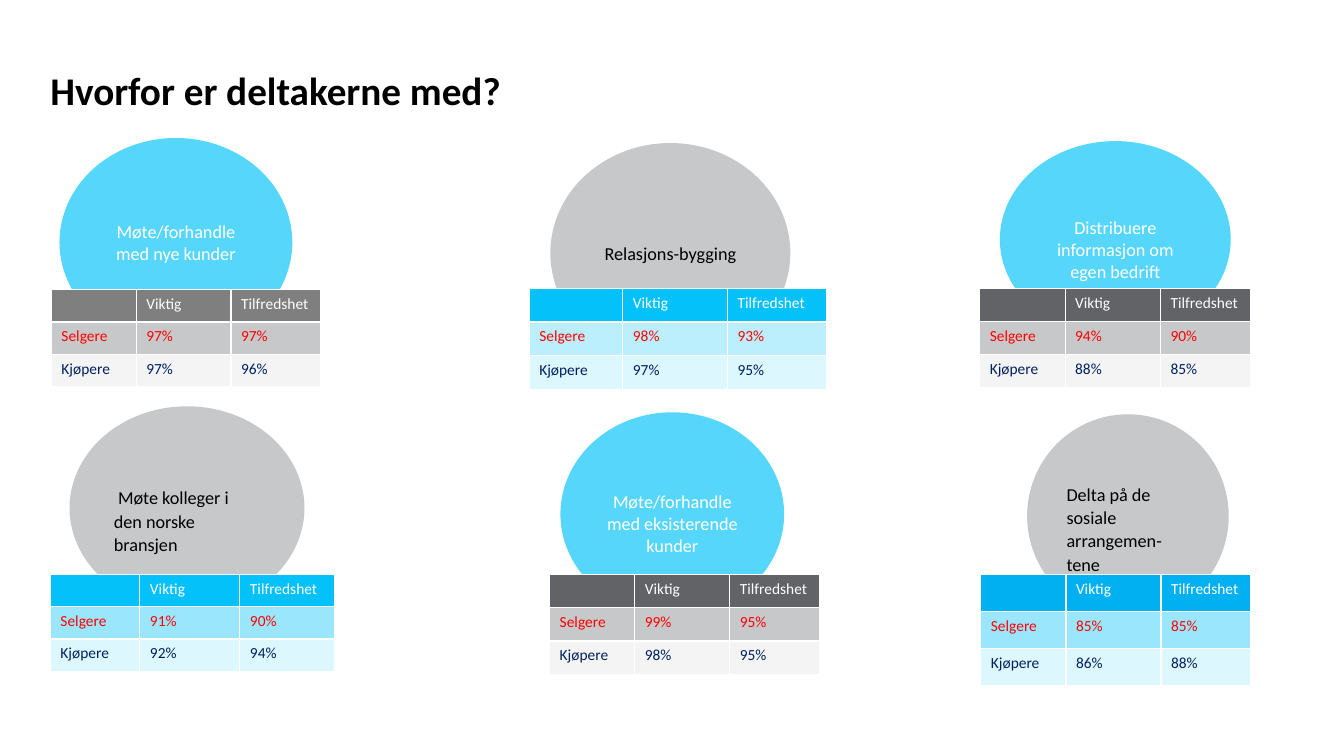
from pptx import Presentation
from pptx.dml.color import RGBColor
from pptx.enum.shapes import MSO_SHAPE
from pptx.enum.text import MSO_ANCHOR, MSO_AUTO_SIZE, PP_ALIGN
from pptx.oxml import parse_xml
from pptx.oxml.ns import nsdecls
from pptx.util import Pt

HEX = {
    "white": "FFFFFF", "black": "000000", "red": "FF0000", "navy": "002060",
    "sky": "57D6FC", "silver": "C7C8CA", "pale": "F4F4F4",
    "gray": "7E7F7E", "slate": "616367", "cyan": "04C1FA", "blue": "00B0F0",
    "ice": "BCEFFE", "aqua": "9AE6FD", "mist": "DDF7FE",
}


def color(name):
    return RGBColor.from_string(HEX[name])


def style(para, size, tint, bold=False):
    font = para.font
    font.name, font.size, font.bold = "Calibri", Pt(size), bold
    font.color.rgb = color(tint)


deck = Presentation()
deck.slide_width, deck.slide_height = Pt(960), Pt(540)
slide = deck.slides.add_slide(deck.slide_layouts[5])

# Title
title = slide.shapes.title
title.left, title.top, title.width, title.height = Pt(36), Pt(51), Pt(891), Pt(36)
frame = title.text_frame
frame.text = "Hvorfor er deltakerne med?"
frame.auto_size = MSO_AUTO_SIZE.NONE
frame.vertical_anchor = MSO_ANCHOR.TOP
frame.margin_left = frame.margin_top = frame.margin_right = frame.margin_bottom = 0
para = frame.paragraphs[0]
para.alignment = PP_ALIGN.LEFT
para.line_spacing = 0.9
style(para, 28, "black", True)

# Reasons: text, fill, box, top inset, centred, first-line indent
reasons = [
    ("Møte/forhandle med nye kunder", "sky", (42.5, 98.6, 166.3, 149), 3.6, True, 0),
    ("Relasjons-bygging", "silver", (393.1, 102.2, 171.4, 157), 3.6, True, 0),
    ("Distribuere informasjon om egen bedrift", "sky",
     (714.2, 100.8, 164.9, 140.4), 18, True, 0),
    ("Møte kolleger i den norske bransjen", "silver",
     (49.7, 290.2, 167.8, 145.4), 21, False, 3),
    ("Møte/forhandle med eksisterende kunder", "sky",
     (400.3, 294.5, 159.8, 145.4), 17, True, 0),
    ("Delta på de sosiale arrangemen-tene", "silver",
     (733.7, 295.9, 144, 145.4), 21, False, 0),
]
for text, fill, box, inset, center, indent in reasons:
    oval = slide.shapes.add_shape(MSO_SHAPE.OVAL, *[Pt(v) for v in box])
    oval.shadow.inherit = False
    oval.fill.solid()
    oval.fill.fore_color.rgb = color(fill)
    oval.line.fill.background()
    frame = oval.text_frame
    frame.word_wrap = True
    frame.vertical_anchor = MSO_ANCHOR.MIDDLE
    frame.margin_top = Pt(inset)
    frame.text = text
    para = frame.paragraphs[0]
    if center:
        para.alignment = PP_ALIGN.CENTER
    else:
        para.alignment = PP_ALIGN.LEFT
        para.line_spacing = 1.07
        frame.margin_right = Pt(9)
    if indent:
        para._p.get_or_add_pPr().set("indent", str(Pt(indent)))
    style(para, 13, "white" if fill == "sky" else "black")

# Scores: box, row fills, sellers, buyers
scores = [
    ((36.7, 207, 192.4, 69), ("gray", "silver", "pale"), (97, 97), (97, 96)),
    ((392.6, 410.4, 193, 71.3), ("slate", "silver", "pale"), (99, 95), (98, 95)),
    ((699.8, 206, 193.7, 70.6), ("slate", "silver", "pale"), (94, 90), (88, 85)),
    ((378, 206, 212.4, 72), ("cyan", "ice", "mist"), (98, 93), (97, 95)),
    ((36, 410.4, 203, 69), ("cyan", "aqua", "mist"), (91, 90), (92, 94)),
    ((700.6, 410.4, 193, 79.2), ("blue", "aqua", "mist"), (85, 85), (86, 88)),
]
shares = (0.315, 0.352, 0.333)
inks = ("white", "red", "navy")
for box, fills, sell, buy in scores:
    table = slide.shapes.add_table(3, 3, *[Pt(v) for v in box]).table
    table.first_row = table.horz_banding = False
    for col, share in zip(table.columns, shares):
        col.width = Pt(box[2] * share)
    rows = [
        ("", "Viktig", "Tilfredshet"),
        ("Selgere", *[f"{v}%" for v in sell]),
        ("Kjøpere", *[f"{v}%" for v in buy]),
    ]
    for r, row in enumerate(rows):
        table.rows[r].height = Pt(box[3] / 3)
        for c, text in enumerate(row):
            cell = table.cell(r, c)
            for side in "LRTB":
                cell._tc.get_or_add_tcPr().append(parse_xml(
                    f'<a:ln{side} {nsdecls("a")} w="{Pt(1)}"><a:solidFill>'
                    f'<a:srgbClr val="{HEX["white"]}"/></a:solidFill></a:ln{side}>'))
            cell.fill.solid()
            cell.fill.fore_color.rgb = color(fills[r])
            if text:
                cell.text = text
            else:
                cell.margin_top = cell.margin_bottom = 0
            style(cell.text_frame.paragraphs[0], 11, inks[r])

deck.save("out.pptx")
